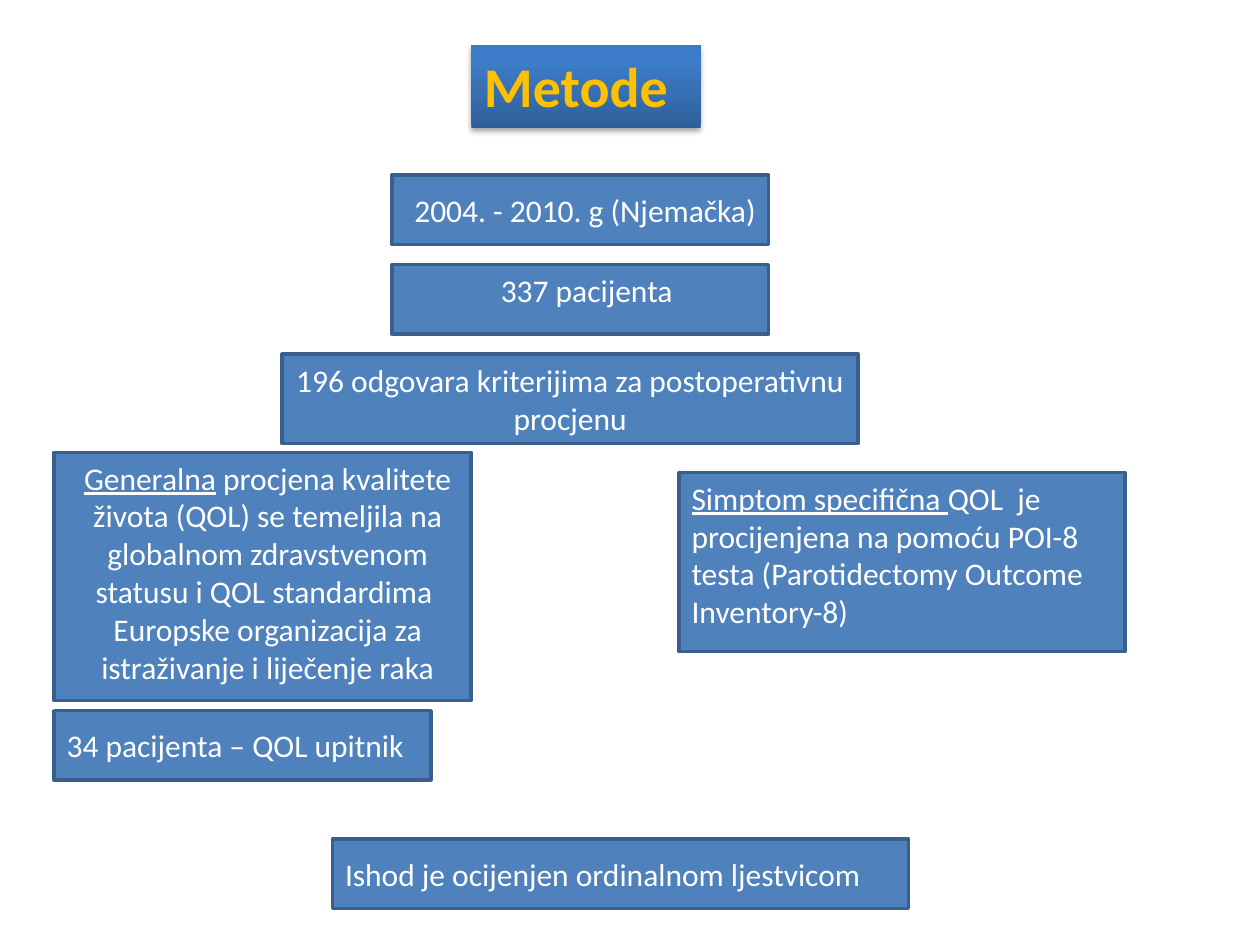
from typing import NamedTuple

from lxml import etree
from pptx import Presentation
from pptx.dml.color import RGBColor
from pptx.enum.shapes import MSO_SHAPE
from pptx.enum.text import MSO_ANCHOR, MSO_AUTO_SIZE, PP_ALIGN
from pptx.util import Inches, Pt

RECTANGLE = MSO_SHAPE.RECTANGLE
LEFT, CENTER = PP_ALIGN.LEFT, PP_ALIGN.CENTER
TOP, MIDDLE = MSO_ANCHOR.TOP, MSO_ANCHOR.MIDDLE
NO_AUTOFIT = MSO_AUTO_SIZE.NONE

FONT = "Calibri"
BOX_FILL, BOX_LINE = "4F81BD", "3A5F8C"
WHITE, GOLD = "FFFFFF", "FFC000"
TITLE_STOPS = ((0, "2F5F99"), (80, "3D7CC7"), (100, "3A7CCB"))
DRAWING_NS = "http://schemas.openxmlformats.org/drawingml/2006/main"


class Area(NamedTuple):
    left: float
    top: float
    width: float
    height: float


class Run(NamedTuple):
    text: str
    underline: bool = False


class Step(NamedTuple):
    box: Area
    paragraphs: list[list[Run]]
    align: PP_ALIGN = LEFT
    label: Area | None = None  # separate text area laid over the box
    wrap: bool = True


STEPS = [
    Step(Area(3.11, 1.39, 2.99, 0.55), [[Run("2004. - 2010. g (Njemačka)")]],
         label=Area(3.19, 1.47, 2.98, 0.4), wrap=False),
    Step(Area(3.11, 2.1, 2.99, 0.55), [[Run(" 337 pacijenta")]],
         label=Area(3.82, 2.1, 1.66, 0.4), wrap=False),
    Step(Area(2.24, 2.81, 4.57, 0.71),
         [[Run("196 odgovara kriterijima za postoperativnu procjenu")]], CENTER),
    Step(Area(0.43, 5.64, 2.99, 0.55), [[Run("34 pacijenta – QOL upitnik")]]),
    Step(Area(0.43, 3.59, 3.31, 1.97),
         [[Run("Generalna", True),
           Run(" procjena kvalitete života (QOL) se temeljila na globalnom "
               "zdravstvenom statusu i QOL standardima  Europske organizacija "
               "za istraživanje i liječenje raka")]],
         CENTER, Area(0.51, 3.59, 3.23, 1.92)),
    Step(Area(5.39, 3.75, 3.54, 1.42),
         [[Run("Simptom specifična ", True),
           Run("QOL  je procijenjena na pomoću POI-8 testa "
               "(Parotidectomy Outcome")],
          [Run("Inventory-8)")]],
         label=Area(5.39, 3.75, 3.78, 1.31)),
    Step(Area(2.64, 6.66, 4.57, 0.55),
         [[Run("Ishod je ocijenjen ordinalnom ljestvicom")]]),
]


def rgb(value: str) -> RGBColor:
    return RGBColor.from_string(value)


def write_text(frame, paragraphs: list[list[Run]], align: PP_ALIGN,
               size: float = 18, color: str = WHITE, bold: bool = False) -> None:
    for index, runs in enumerate(paragraphs):
        paragraph = frame.paragraphs[0] if index == 0 else frame.add_paragraph()
        paragraph.alignment = align
        for part in runs:
            run = paragraph.add_run()
            run.text = part.text
            run.font.name = FONT
            run.font.size = Pt(size)
            run.font.bold = bold
            run.font.underline = part.underline
            run.font.color.rgb = rgb(color)


def draw_step(slide, step: Step) -> None:
    box = slide.shapes.add_shape(RECTANGLE, *map(Inches, step.box))
    box.shadow.inherit = False
    box.fill.solid()
    box.fill.fore_color.rgb = rgb(BOX_FILL)
    box.line.color.rgb = rgb(BOX_LINE)
    box.line.width = Pt(2)

    holder, anchor = box, MIDDLE
    if step.label:
        holder = slide.shapes.add_textbox(*map(Inches, step.label))
        anchor = TOP
    frame = holder.text_frame
    frame.word_wrap = step.wrap
    frame.vertical_anchor = anchor
    write_text(frame, step.paragraphs, step.align)


def draw_title(slide, area: Area) -> None:
    title = slide.shapes.title
    title.left, title.top, title.width, title.height = map(Inches, area)
    frame = title.text_frame
    frame.auto_size = NO_AUTOFIT
    frame.word_wrap = True
    frame.vertical_anchor = TOP
    write_text(frame, [[Run("Metode")]], LEFT, 32, GOLD, True)

    # Three-stop gradient and soft shadow
    stops = "".join(f'<a:gs pos="{position * 1000}"><a:srgbClr val="{color}"/></a:gs>'
                    for position, color in TITLE_STOPS)
    gradient = (f'<a:gradFill xmlns:a="{DRAWING_NS}" rotWithShape="1">'
                f'<a:gsLst>{stops}</a:gsLst>'
                f'<a:lin ang="{270 * 60000}" scaled="0"/></a:gradFill>')
    shadow = (f'<a:effectLst xmlns:a="{DRAWING_NS}">'
              f'<a:outerShdw blurRad="{Pt(3.1)}" dist="{Pt(1.8)}" '
              f'dir="{90 * 60000}" rotWithShape="0">'
              '<a:srgbClr val="000000"><a:alpha val="35000"/></a:srgbClr>'
              '</a:outerShdw></a:effectLst>')
    for xml in (gradient, shadow):
        title.element.spPr.append(etree.fromstring(xml))


def main() -> None:
    presentation = Presentation()
    presentation.slide_width = Inches(10)
    presentation.slide_height = Inches(7.5)
    title_only = presentation.slide_layouts[5]
    slide = presentation.slides.add_slide(title_only)

    draw_title(slide, Area(3.74, 0.36, 1.82, 0.66))
    for step in STEPS:
        draw_step(slide, step)

    presentation.save("out.pptx")


if __name__ == "__main__":
    main()
